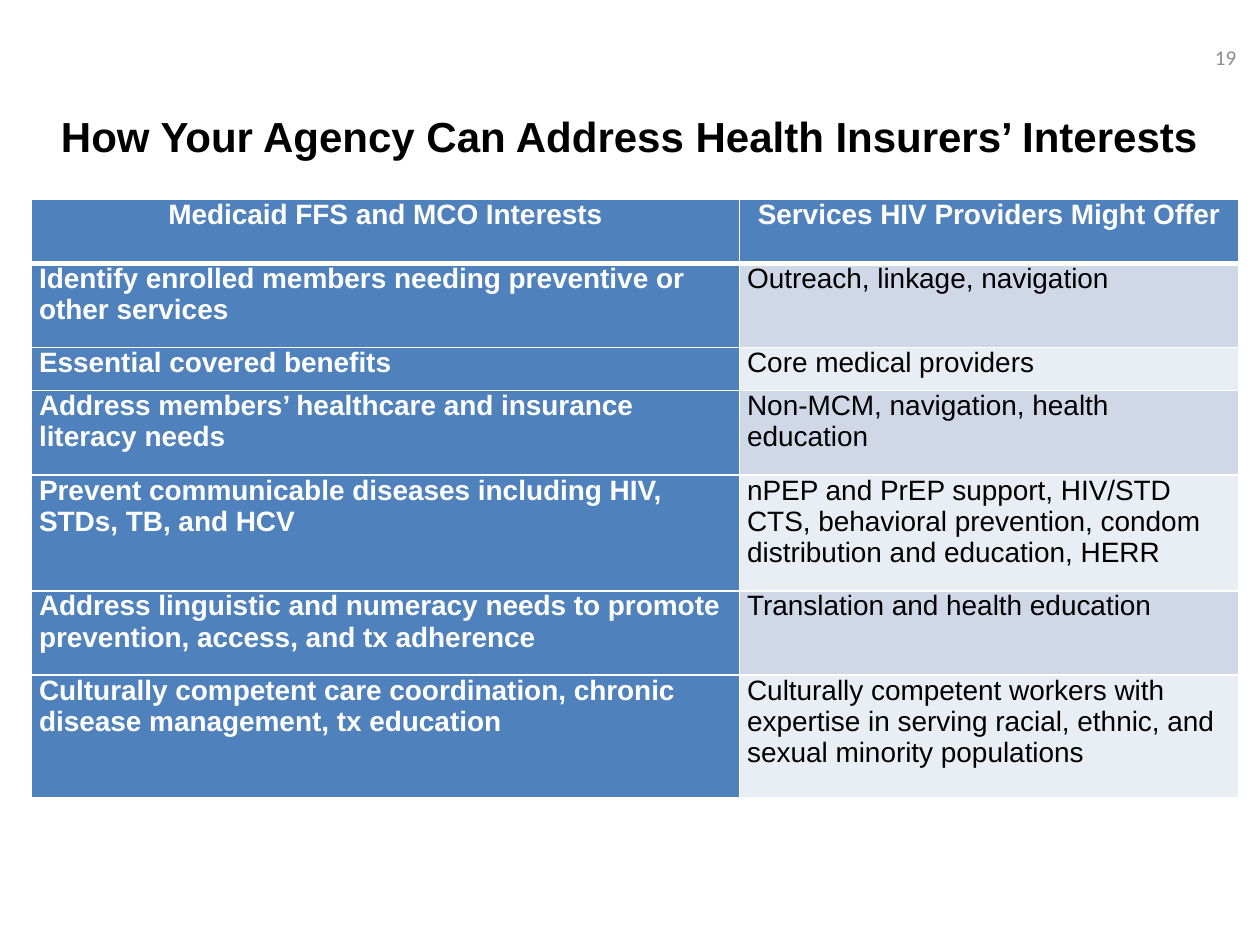
import pptx
import pptx.util
import pptx.dml.color
import pptx.enum.text
import pptx.oxml.ns
from lxml import etree

Inches, Pt = pptx.util.Inches, pptx.util.Pt
RGBColor = pptx.dml.color.RGBColor
ALIGN = pptx.enum.text.PP_ALIGN
qn = pptx.oxml.ns.qn

BLACK = RGBColor(0x00, 0x00, 0x00)
WHITE = RGBColor(0xFF, 0xFF, 0xFF)
GREY = RGBColor(0x8C, 0x8C, 0x8C)
BLUE = RGBColor(0x4F, 0x81, 0xBD)
BANDS = [RGBColor(0xD0, 0xD8, 0xE8), RGBColor(0xE9, 0xED, 0xF4)]

COLUMN_WIDTHS = [5.62, 3.96]
ROWS = [
    (0.51, "Medicaid FFS and MCO Interests", "Services HIV Providers Might Offer"),
    (0.67, "Identify enrolled members needing preventive or other services",
     "Outreach, linkage, navigation"),
    (0.34, "Essential covered benefits", "Core medical providers"),
    (0.67, "Address members’ healthcare and insurance literacy needs",
     "Non-MCM, navigation, health education"),
    (0.92, "Prevent communicable diseases including HIV, STDs, TB, and HCV",
     "nPEP and PrEP support, HIV/STD CTS, behavioral prevention, condom "
     "distribution and education, HERR"),
    (0.67, "Address linguistic and numeracy needs to promote prevention, access, "
     "and tx adherence", "Translation and health education"),
    (0.97, "Culturally competent care coordination, chronic disease management, "
     "tx education",
     "Culturally competent workers with expertise in serving racial, ethnic, "
     "and sexual minority populations"),
]


def style(paragraph, font_name, size, color, bold, align):
    paragraph.alignment = align
    font = paragraph.font
    font.name, font.size, font.bold = font_name, Pt(size), bold
    font.color.rgb = color


def add_border(cell, side, width):
    line = etree.SubElement(cell._tc.get_or_add_tcPr(), qn(f"a:ln{side}"), w=str(Pt(width)))
    fill = etree.SubElement(line, qn("a:solidFill"))
    etree.SubElement(fill, qn("a:srgbClr"), val=str(WHITE))


deck = pptx.Presentation()
deck.slide_width, deck.slide_height = Inches(10), Inches(7.5)
slide = deck.slides.add_slide(deck.slide_layouts[6])

# Title and page number
for text, box, look in [
    ("How Your Agency Can Address Health Insurers’ Interests",
     (0.33, 0.58, 9.33, 1), ("Arial", 24, BLACK, True, ALIGN.CENTER)),
    ("19", (7.58, 0.25, 2.33, 0.4), ("Calibri", 12, GREY, False, ALIGN.RIGHT)),
]:
    frame = slide.shapes.add_textbox(*map(Inches, box)).text_frame
    frame.word_wrap = True
    frame.vertical_anchor = pptx.enum.text.MSO_ANCHOR.MIDDLE
    frame.text = text
    style(frame.paragraphs[0], *look)

# Table of interests and matching services
interests = slide.shapes.add_table(
    len(ROWS), len(COLUMN_WIDTHS), Inches(0.25), Inches(1.58),
    Inches(sum(COLUMN_WIDTHS)), Inches(sum(row[0] for row in ROWS))).table
for column, width in zip(interests.columns, COLUMN_WIDTHS):
    column.width = Inches(width)

for r, (height, *texts) in enumerate(ROWS):
    interests.rows[r].height = Inches(height)
    for c, text in enumerate(texts):
        cell = interests.cell(r, c)
        cell.margin_left = cell.margin_right = Inches(0.06)
        cell.margin_top = cell.margin_bottom = 0
        cell.text = text
        heading = r == 0 or c == 0
        style(cell.text_frame.paragraphs[0], "Arial", 16, WHITE if heading else BLACK,
              heading, ALIGN.CENTER if r == 0 else ALIGN.LEFT)
        # The rule under the header row is heavier than the rest
        for side in "LRTB":
            heavy = (r, side) in [(0, "B"), (1, "T")]
            add_border(cell, side, 3 if heavy else 1)
        cell.fill.solid()
        cell.fill.fore_color.rgb = BLUE if heading else BANDS[(r - 1) % 2]

deck.save("out.pptx")
